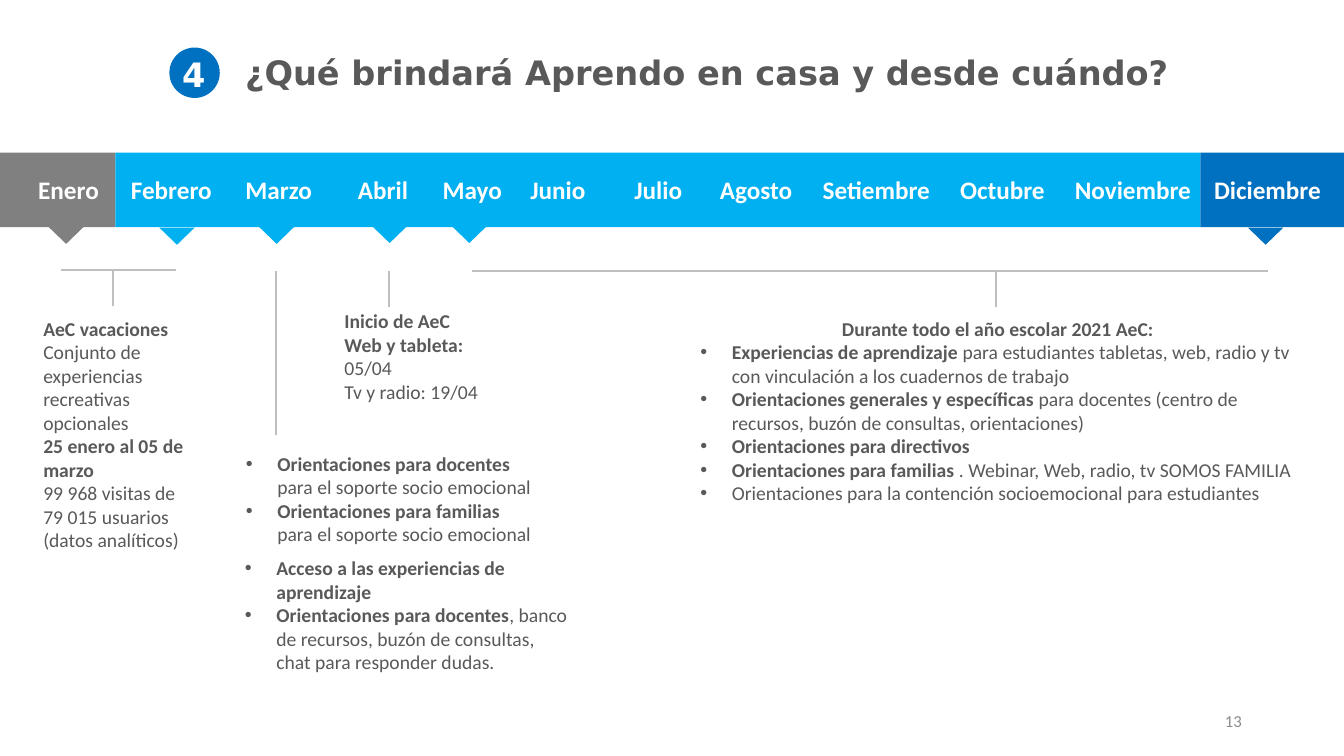
from dataclasses import dataclass

from lxml import etree
from pptx import Presentation
from pptx.dml.color import RGBColor
from pptx.enum.shapes import MSO_CONNECTOR, MSO_SHAPE
from pptx.enum.text import MSO_ANCHOR, MSO_AUTO_SIZE, PP_ALIGN
from pptx.oxml.ns import qn
from pptx.util import Pt

LEFT, CENTER, RIGHT = PP_ALIGN.LEFT, PP_ALIGN.CENTER, PP_ALIGN.RIGHT
TOP, MIDDLE = MSO_ANCHOR.TOP, MSO_ANCHOR.MIDDLE
RECT, OVAL, TRIANGLE = MSO_SHAPE.RECTANGLE, MSO_SHAPE.OVAL, MSO_SHAPE.ISOSCELES_TRIANGLE
STRAIGHT = MSO_CONNECTOR.STRAIGHT
FIT_SHAPE, NO_FIT = MSO_AUTO_SIZE.SHAPE_TO_FIT_TEXT, MSO_AUTO_SIZE.NONE


@dataclass(frozen=True)
class Theme:
    body_font: str = "Calibri"
    title_font: str = "DejaVu Sans"
    title_size: int = 24
    month_size: int = 18
    body_size: int = 14
    number_size: int = 12
    text: str = "595959"
    muted: str = "8C8C8C"
    white: str = "FFFFFF"
    past: str = "808080"
    current: str = "00B0F0"
    last: str = "0070C0"
    rule: str = "BFBFBF"
    bullet_indent: float = 22.5


class SlideBuilder:
    def __init__(self, slide, theme):
        self.s = slide
        self.t = theme

    def run(self, p, text, size, color, bold=False, font=None):
        r = p.add_run()
        r.text = text
        r.font.name = font or self.t.body_font
        r.font.size = Pt(size)
        r.font.bold = bold
        r.font.color.rgb = RGBColor.from_string(color)

    def shape(self, kind, x, y, w, h, color, rotation=0):
        sp = self.s.shapes.add_shape(kind, Pt(x), Pt(y), Pt(w), Pt(h))
        sp.shadow.inherit = False
        sp.fill.solid()
        sp.fill.fore_color.rgb = RGBColor.from_string(color)
        sp.line.fill.background()
        sp.rotation = rotation

    def line(self, x1, y1, x2, y2):
        c = self.s.shapes.add_connector(STRAIGHT, Pt(x1), Pt(y1), Pt(x2), Pt(y2))
        c.line.color.rgb = RGBColor.from_string(self.t.rule)
        c.line.width = Pt(1.5)
        etree.SubElement(c._element.spPr, qn("a:effectLst"))

    def box(self, x, y, w, h, wrap=True, fit=FIT_SHAPE, anchor=TOP):
        tf = self.s.shapes.add_textbox(Pt(x), Pt(y), Pt(w), Pt(h)).text_frame
        tf.word_wrap = wrap
        tf.auto_size = fit
        tf.vertical_anchor = anchor
        return tf

    def label(self, text, x, y, w, h, size, color, align=CENTER, **style):
        """One-line text; a fixed frame is centred vertically."""
        tf = self.box(x, y, w, h, fit=NO_FIT, anchor=MIDDLE)
        p = tf.paragraphs[0]
        p.alignment = align
        self.run(p, text, size, color, **style)

    def month(self, name, x, w):
        p = self.box(x, 121, w, 29, wrap=False).paragraphs[0]
        p.alignment = CENTER
        self.run(p, name, self.t.month_size, self.t.white, bold=True)

    def title(self, text, x, y, w, h):
        sp = self.s.shapes.title
        sp.left, sp.top, sp.width, sp.height = Pt(x), Pt(y), Pt(w), Pt(h)
        tf = sp.text_frame
        tf.word_wrap = True
        tf.auto_size = NO_FIT
        tf.vertical_anchor = MIDDLE
        tf.margin_left = Pt(28.8)
        tf.margin_top = tf.margin_right = tf.margin_bottom = Pt(5)
        p = tf.paragraphs[0]
        p.alignment = LEFT
        p.line_spacing = 0.9
        self.run(p, text, self.t.title_size, self.t.text, True, self.t.title_font)

    def bullet(self, p):
        pPr = p._p.get_or_add_pPr()
        pPr.set("marL", str(Pt(self.t.bullet_indent)))
        pPr.set("indent", str(-Pt(self.t.bullet_indent)))
        etree.SubElement(pPr, qn("a:buFont")).set("typeface", "Arial")
        etree.SubElement(pPr, qn("a:buChar")).set("char", "•")

    def note(self, x, y, w, h, paragraphs, bulleted=True, heading=None):
        """Paragraphs are (bold text, regular text) pairs."""
        tf = self.box(x, y, w, h)
        p = tf.paragraphs[0]
        if heading:
            p.alignment = CENTER
            self.run(p, heading, self.t.body_size, self.t.text, True)
        for i, (strong, plain) in enumerate(paragraphs):
            if i or heading:
                p = tf.add_paragraph()
            p.alignment = LEFT
            if bulleted:
                self.bullet(p)
            for text, bold in ((strong, True), (plain, False)):
                if text:
                    self.run(p, text, self.t.body_size, self.t.text, bold)


MONTHS = [
    ("Enero", 20.2, 57.6), ("Febrero", 86.4, 72), ("Marzo", 167.8, 62.6),
    ("Abril", 248.4, 50.4), ("Mayo", 308.9, 56.9), ("Junio", 371.5, 54),
    ("Julio", 445.7, 49), ("Agosto", 506.9, 66.2), ("Setiembre", 580.3, 91.4),
    ("Octubre", 678.2, 75.6), ("Noviembre", 760.3, 97.9), ("Diciembre", 859.7, 91.4),
]
VACATION = [
    ("AeC vacaciones", ""),
    ("", "Conjunto de experiencias recreativas opcionales"),
    ("25 enero al 05 de marzo", ""),
    ("", "99 968 visitas de"),
    ("", "79 015 usuarios (datos analíticos)"),
]
LAUNCH = [
    ("Inicio de AeC", ""),
    ("Web y tableta: ", "05/04"),
    ("", "Tv y radio: 19/04"),
]
SUPPORT = [
    ("Orientaciones para docentes ", "para el soporte socio emocional"),
    ("Orientaciones para familias ", "para el soporte socio emocional"),
]
ACCESS = [
    ("Acceso a las experiencias de aprendizaje", ""),
    ("Orientaciones para docentes",
     ", banco de recursos, buzón de consultas, chat para responder dudas."),
]
SCHOOL_YEAR = [
    ("Experiencias de aprendizaje ",
     "para estudiantes tabletas, web, radio y tv con vinculación a los cuadernos de trabajo"),
    ("Orientaciones generales y específicas ",
     "para docentes (centro de recursos, buzón de consultas, orientaciones)"),
    ("Orientaciones para directivos", ""),
    ("Orientaciones para familias ", ". Webinar, Web, radio, tv SOMOS FAMILIA"),
    ("", "Orientaciones para la contención socioemocional para estudiantes"),
]


def main():
    prs = Presentation()
    prs.slide_width, prs.slide_height = Pt(960), Pt(540)
    t = Theme()
    b = SlideBuilder(prs.slides.add_slide(prs.slide_layouts[5]), t)

    b.title("¿Qué brindará Aprendo en casa y desde cuándo?", 146.2, 39.6, 754.6, 28)
    b.shape(OVAL, 121, 34, 36, 36, t.last)
    b.label("4", 120.4, 37.4, 36, 31, t.title_size, t.white, bold=True, font=t.title_font)

    for x, right, color in ((0, 82.4, t.past), (82.4, 857.5, t.current), (857.5, 960, t.last)):
        b.shape(RECT, x, 109, right - x, 53.2, color)
    for name, x, w in MONTHS:
        b.month(name, x, w)
    for x, y, color in ((34.6, 162, t.past), (113.8, 162.6, t.current),
                        (185, 162, t.current), (265.7, 161.4, t.current),
                        (322.6, 161.4, t.current), (891.4, 162.6, t.last)):
        b.shape(TRIANGLE, x, y, 25.2, 12.2, color, rotation=180)

    for x1, x2, y in ((43.9, 126, 193), (337, 905.8, 193.7)):
        b.line(x1, y, x2, y)
    for x, y1, y2 in ((80.6, 193, 218.9), (197.3, 193.7, 311),
                      (277.9, 193.7, 219.6), (711.4, 193.7, 219.6)):
        b.line(x, y1, x, y2)

    b.note(23.8, 222.5, 133.2, 177, VACATION, bulleted=False)
    b.note(239, 217.4, 116, 75, LAUNCH, bulleted=False)
    b.note(168.5, 319, 219.6, 75, SUPPORT)
    b.note(167.8, 393.8, 246.2, 92, ACCESS)
    b.note(493.2, 222.5, 439.2, 143.3, SCHOOL_YEAR,
           heading="Durante todo el año escolar 2021 AeC:")
    b.label("13", 678.2, 500.4, 216, 28.8, t.number_size, t.muted, RIGHT)

    prs.save("out.pptx")


if __name__ == "__main__":
    main()
